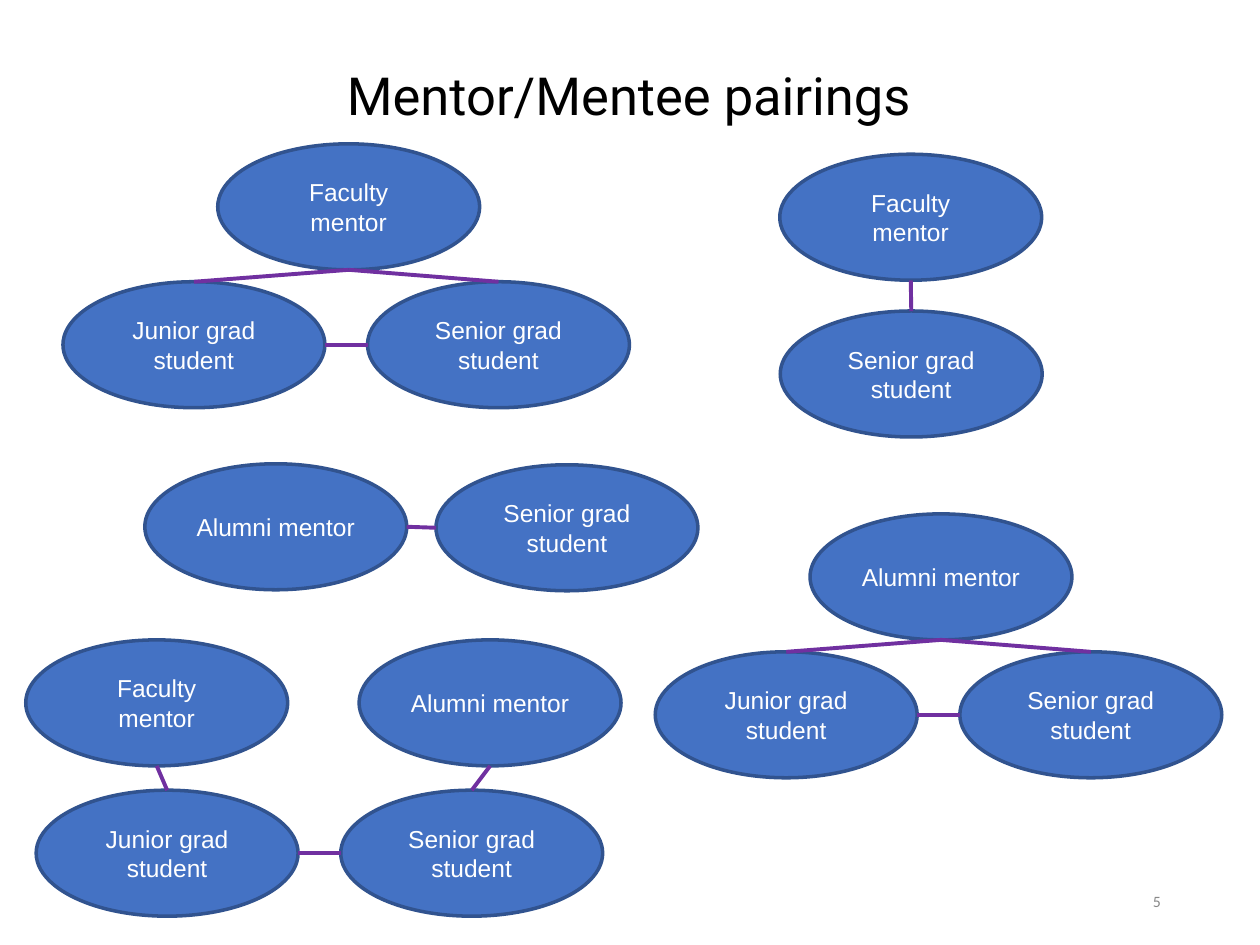
from dataclasses import dataclass

from lxml.etree import SubElement
from pptx import Presentation
from pptx.dml.color import RGBColor as Rgb
from pptx.enum.shapes import MSO_CONNECTOR as Connector, MSO_SHAPE as Shape
from pptx.enum.text import MSO_ANCHOR as Anchor, PP_ALIGN as Align
from pptx.oxml.ns import qn
from pptx.util import Cm, Pt


@dataclass(frozen=True)
class Theme:
    oval_fill: Rgb = Rgb.from_string("4472C4")
    oval_edge: Rgb = Rgb.from_string("31538F")
    link: Rgb = Rgb.from_string("7030A0")
    oval_text: Rgb = Rgb.from_string("FFFFFF")
    title: Rgb = Rgb.from_string("000000")
    number: Rgb = Rgb.from_string("888888")
    title_size: float = 30
    oval_size: float = 14
    number_size: float = 9
    edge_width: float = 2
    link_width: float = 2.25


OVAL_W, OVAL_H = 5.28, 2.54
STUDENT_STEP = 6.14  # from a junior student to the senior student beside

# Where a link meets an oval, as shares of its width and height
TOP, BOTTOM, LEFT, RIGHT = (0.5, 0), (0.5, 1), (0, 0.5), (1, 0.5)

FACULTY, ALUMNI = "Faculty mentor", "Alumni mentor"
JUNIOR, SENIOR = "Junior grad student", "Senior grad student"
SIDE_BY_SIDE = (JUNIOR, RIGHT, SENIOR, LEFT)


class PairingSlide:
    def __init__(self, slide, theme):
        self.slide, self.theme = slide, theme

    def fill_text(self, frame, text, font, size, color, align):
        frame.word_wrap = True
        frame.vertical_anchor = Anchor.MIDDLE
        paragraph = frame.paragraphs[0]
        paragraph.alignment = align
        run = paragraph.add_run()
        run.text = text
        run.font.name, run.font.size = font, Pt(size)
        run.font.color.rgb = color
        return paragraph

    def label(self, box, *style):
        area = self.slide.shapes.add_textbox(*map(Cm, box))
        return self.fill_text(area.text_frame, *style)

    def oval(self, group, role, place):
        person = group.shapes.add_shape(
            Shape.OVAL, *map(Cm, (*place, OVAL_W, OVAL_H)))
        person.shadow.inherit = False
        person.fill.solid()
        person.fill.fore_color.rgb = self.theme.oval_fill
        person.line.color.rgb = self.theme.oval_edge
        person.line.width = Pt(self.theme.edge_width)
        self.fill_text(person.text_frame, role, "Arial", self.theme.oval_size,
                       self.theme.oval_text, Align.CENTER)

    def link(self, group, start, end):
        bond = group.shapes.add_connector(
            Connector.STRAIGHT, *map(Cm, (*start, *end)))
        bond.line.color.rgb = self.theme.link
        bond.line.width = Pt(self.theme.link_width)
        SubElement(bond._element.spPr, qn("a:effectLst"))

    def pairing(self, people, links):
        """Group ovals placed by role with links (role, side, role, side)."""
        group = self.slide.shapes.add_group_shape()
        for role, place in people.items():
            self.oval(group, role, place)

        def meet(role, side):
            x, y = people[role]
            return x + side[0] * OVAL_W, y + side[1] * OVAL_H

        for first, first_side, second, second_side in links:
            self.link(group, meet(first, first_side), meet(second, second_side))

    def trio(self, mentor, x, y):
        """One mentor above a linked junior and senior student."""
        students_y = y + 2.78
        self.pairing(
            {SENIOR: (x + STUDENT_STEP, students_y), JUNIOR: (x, students_y),
             mentor: (x + 3.12, y)},
            [(mentor, BOTTOM, JUNIOR, TOP), (mentor, BOTTOM, SENIOR, TOP),
             SIDE_BY_SIDE])


def main():
    deck = Presentation()
    deck.slide_width, deck.slide_height = Cm(25.4), Cm(19.05)
    theme = Theme()
    page = PairingSlide(deck.slides.add_slide(deck.slide_layouts[6]), theme)

    title = page.label((1.73, 0.15, 21.9, 3.68), "Mentor/Mentee pairings",
                       "Roboto", theme.title_size, theme.title, Align.CENTER)
    title.line_spacing = 0.9
    page.label((17.93, 17.65, 5.72, 1.02), "5", "Calibri",
               theme.number_size, theme.number, Align.RIGHT)

    page.trio(FACULTY, 1.27, 2.9)
    page.trio(ALUMNI, 13.21, 10.36)
    page.pairing(
        {ALUMNI: (7.24, 12.9), SENIOR: (0.73 + STUDENT_STEP, 15.93),
         JUNIOR: (0.73, 15.93), FACULTY: (0.52, 12.9)},
        [(FACULTY, BOTTOM, JUNIOR, TOP), (ALUMNI, BOTTOM, SENIOR, TOP),
         SIDE_BY_SIDE])
    page.pairing({SENIOR: (15.73, 6.27), FACULTY: (15.72, 3.11)},
                 [(FACULTY, BOTTOM, SENIOR, TOP)])
    page.pairing({ALUMNI: (2.92, 9.35), SENIOR: (8.79, 9.37)},
                 [(ALUMNI, RIGHT, SENIOR, LEFT)])

    deck.save("out.pptx")


if __name__ == "__main__":
    main()
